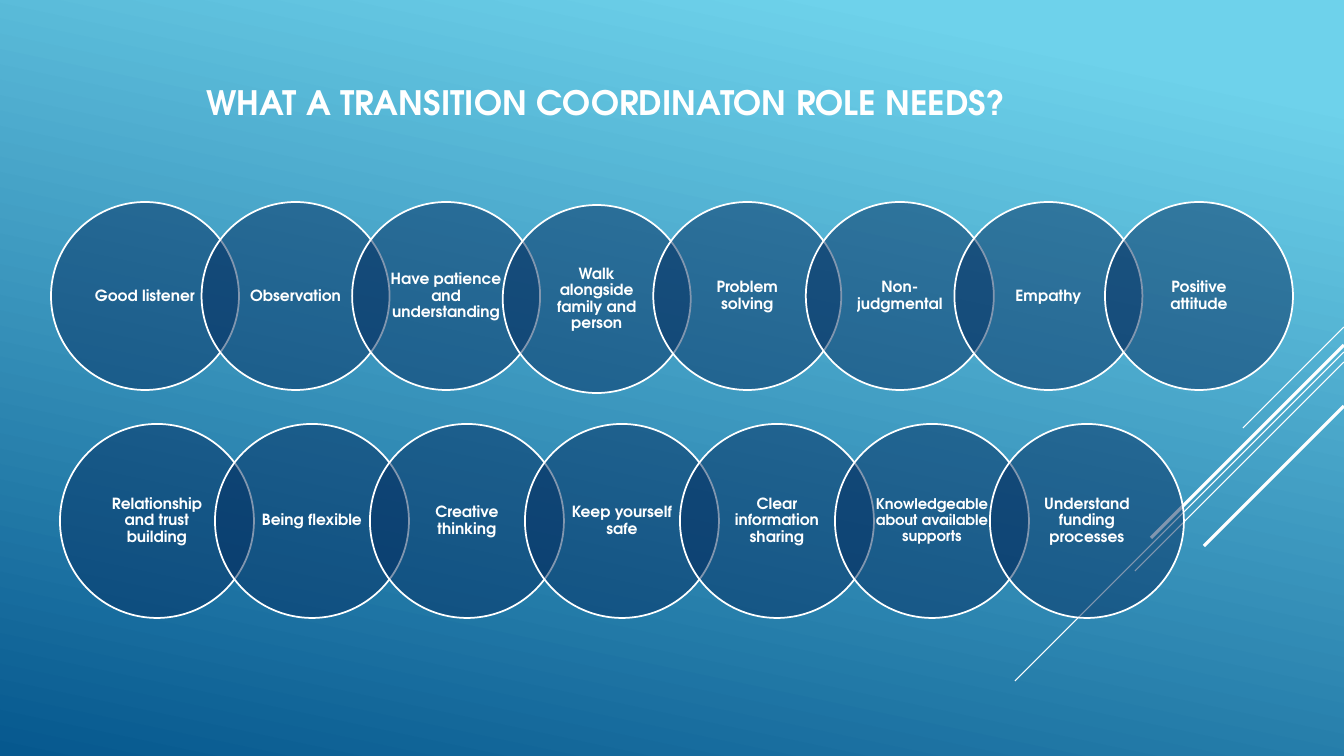
from dataclasses import dataclass

from lxml.etree import SubElement
from pptx import Presentation
from pptx.dml.color import RGBColor as Color
from pptx.enum.shapes import MSO_CONNECTOR as Connector, MSO_SHAPE as Preset
from pptx.enum.text import MSO_ANCHOR as Anchor, PP_ALIGN as Align
from pptx.oxml.ns import qn
from pptx.util import Pt

PAGE_WIDTH, PAGE_HEIGHT = 1344, 756
EMU_PER_PX = 914400 / 100.8


@dataclass(frozen=True)
class Theme:
    """Colours, font and sizes of the slide."""
    white: Color = Color.from_string("FFFFFF")
    navy: Color = Color.from_string("052F61")
    sky: Color = Color.from_string("6ED2EB")
    ocean: Color = Color.from_string("06588E")
    font: str = "TeX Gyre Adventor"
    title: float = 24
    label: float = 11
    small_label: float = 10.5
    outline: float = 1.25
    thin: float = 0.75
    thick: float = 2.25
    circle_alpha: int = 50


THEME = Theme()

QUALITIES = ["Good listener", "Observation", "Have patience and understanding",
             "Walk alongside family and person", "Problem solving",
             "Non-judgmental", "Empathy", "Positive attitude"]
SKILLS = ["Relationship and trust building", "Being flexible",
          "Creative thinking", "Keep yourself safe",
          "Clear information sharing", "Knowledgeable about available supports",
          "Understand funding processes"]
LABEL_SIZES = {"Knowledgeable about available supports": THEME.small_label}
NUDGES = {"Walk alongside family and person": (0, 3), "Non-judgmental": (2, 0)}
STREAKS = [(327, 101, THEME.thin), (352, 329, THEME.thin),
           (362, 209, THEME.thin), (345, 193, THEME.thick),
           (406, 140, THEME.thick)]


def px(*lengths):
    """Turn pixel lengths into EMU."""
    return [round(length * EMU_PER_PX) for length in lengths]


def apply(target, formats):
    """Set every attribute named in formats on target."""
    for name, value in formats.items():
        setattr(target, name, value)


def write(shape, text, size, anchor, align, inset):
    """Write one bold white paragraph into a shape."""
    side, end = px(*inset)
    frame = shape.text_frame
    apply(frame, {"word_wrap": True, "vertical_anchor": anchor,
                  "margin_left": side, "margin_right": side,
                  "margin_top": end, "margin_bottom": end})
    para = frame.paragraphs[0]
    apply(para, {"alignment": align, "line_spacing": 0.9})
    span = para.add_run()
    span.text = text
    apply(span.font, {"name": THEME.font, "size": Pt(size), "bold": True})
    span.font.color.rgb = THEME.white


def paint_background(page):
    """Fill the page with the slanted blue gradient."""
    fill = page.background.fill
    fill.gradient()
    fill.gradient_angle = 258
    stops = [(0.1, THEME.sky), (1, THEME.ocean)]
    for stop, (position, color) in zip(fill.gradient_stops, stops):
        stop.position = position
        stop.color.rgb = color


def draw_streaks(page, right):
    """Draw the diagonal streaks that run down from the right edge."""
    for top, reach, weight in STREAKS:
        ends = px(right, top, right - reach, top + reach)
        streak = page.shapes.add_connector(Connector.STRAIGHT, *ends)
        streak.line.color.rgb = THEME.white
        streak.line.width = Pt(weight)
        SubElement(streak.element.spPr, qn("a:effectLst"))


def draw_title(page, box):
    """Place the heading at the bottom of its box."""
    title = page.shapes.add_textbox(*px(*box))
    write(title, "WHAT A TRANSITION COORDINATON ROLE NEEDS?", THEME.title,
          Anchor.BOTTOM, Align.LEFT, (10, 5))


def draw_circle(page, box, label, inset):
    """Draw one translucent labelled circle."""
    circle = page.shapes.add_shape(Preset.OVAL, *px(*box))
    circle.shadow.inherit = False
    circle.fill.solid()
    circle.fill.fore_color.rgb = THEME.navy
    color = circle.element.spPr.find(qn("a:solidFill"))[0]
    SubElement(color, qn("a:alpha"), val=str(THEME.circle_alpha * 1000))
    circle.line.color.rgb = THEME.white
    circle.line.width = Pt(THEME.outline)
    write(circle, label, LABEL_SIZES.get(label, THEME.label),
          Anchor.MIDDLE, Align.CENTER, inset)


def draw_chain(page, box, labels, inset):
    """Spread overlapping circles evenly across the box."""
    left, top, width, diameter = box
    pitch = (width - diameter) / (len(labels) - 1)
    for index, label in enumerate(labels):
        across, down = NUDGES.get(label, (0, 0))
        spot = (left + index * pitch + across, top + down, diameter, diameter)
        draw_circle(page, spot, label, inset)


def main():
    """Build the slide and save the deck."""
    deck = Presentation()
    deck.slide_width, deck.slide_height = px(PAGE_WIDTH, PAGE_HEIGHT)
    page = deck.slides.add_slide(deck.slide_layouts[6])
    paint_background(page)
    draw_streaks(page, PAGE_WIDTH)
    draw_title(page, (196, 76, 989, 52))
    draw_chain(page, (51, 202, 1242, 188), QUALITIES, (10, 2))
    draw_chain(page, (60, 424, 1124, 194), SKILLS, (11, 2))
    deck.save("out.pptx")


if __name__ == "__main__":
    main()
